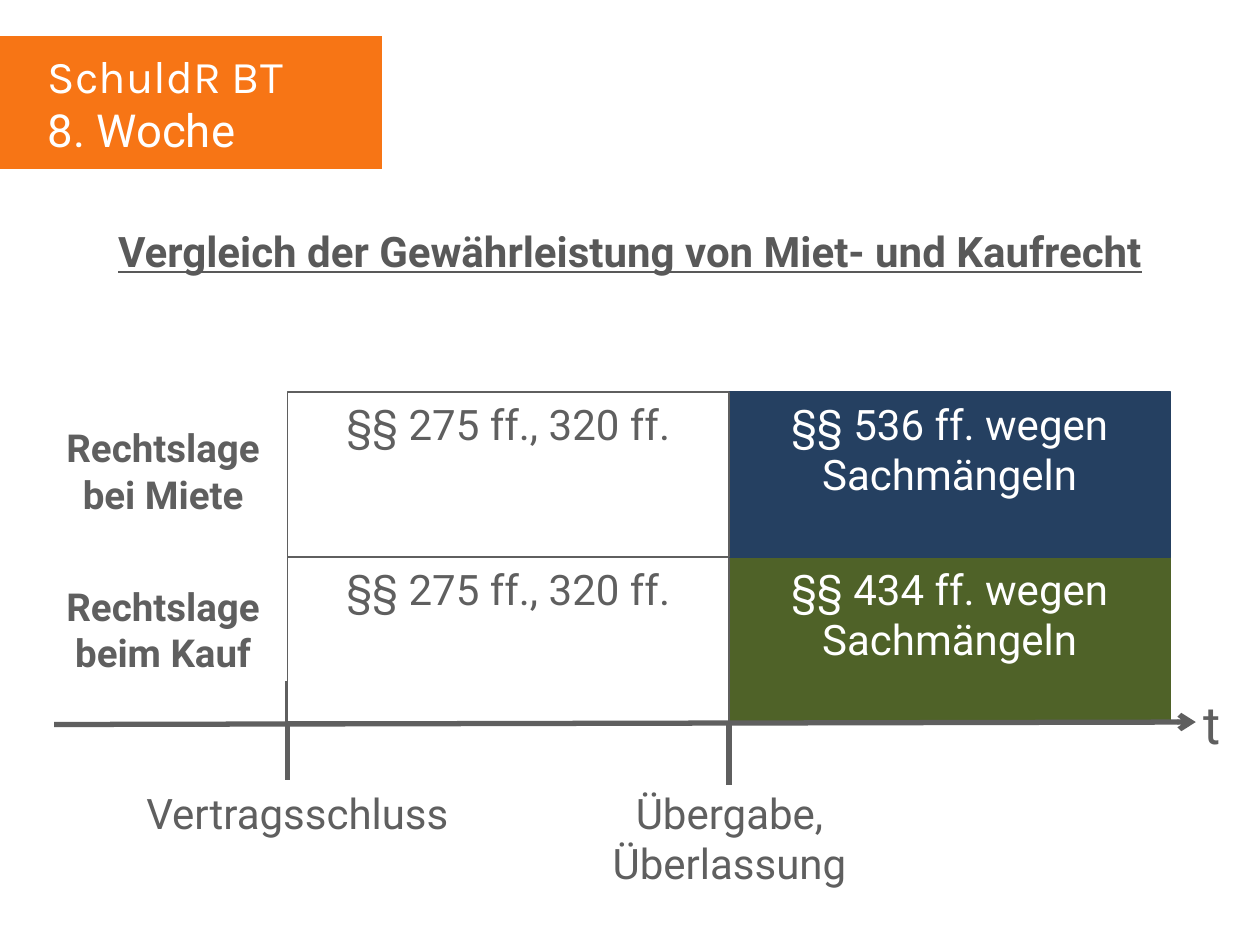
from lxml.etree import SubElement
from pptx import Presentation
from pptx.dml.color import RGBColor
from pptx.enum.shapes import MSO_CONNECTOR, MSO_SHAPE
from pptx.enum.text import MSO_ANCHOR, MSO_AUTO_SIZE, PP_ALIGN
from pptx.oxml.ns import qn
from pptx.util import Pt

ORANGE = RGBColor(0xF7, 0x75, 0x15)
WHITE = RGBColor(0xFF, 0xFF, 0xFF)
DARK_GRAY = RGBColor(0x59, 0x59, 0x59)
GRAY = RGBColor(0x5F, 0x5F, 0x5F)
BLUE = RGBColor(0x25, 0x40, 0x61)
GREEN = RGBColor(0x4F, 0x62, 0x28)

# Grid of the comparison, in points
GRID_LEFT, GRID_TOP = 164.4, 224
CELL_WIDTH, CELL_HEIGHT = 252.2, 94.3
HANDOVER = GRID_LEFT + CELL_WIDTH


def write(box, lines, fonts=("Roboto",), size=24, color=GRAY, bold=False,
          underline=False, align=PP_ALIGN.CENTER, space_after=0):
    """Write one paragraph per line, with one font for all or one for each."""
    frame = box.text_frame
    frame.word_wrap = True
    frame.auto_size = MSO_AUTO_SIZE.NONE
    frame.vertical_anchor = MSO_ANCHOR.TOP
    for index, line in enumerate(lines):
        para = frame.add_paragraph() if index else frame.paragraphs[0]
        para.alignment = align
        para.space_before = Pt(0)
        para.space_after = Pt(space_after)
        span = para.add_run()
        span.text = line
        span.font.name = fonts[index % len(fonts)]
        span.font.size = Pt(size)
        span.font.bold = bold
        span.font.underline = underline
        span.font.color.rgb = color


def add_text(page, left, top, width, height, *lines, **text_format):
    box = page.shapes.add_textbox(Pt(left), Pt(top), Pt(width), Pt(height))
    write(box, lines, **text_format)


def add_block(page, left, top, width, height, fill, outline=None):
    block = page.shapes.add_shape(
        MSO_SHAPE.RECTANGLE, Pt(left), Pt(top), Pt(width), Pt(height))
    block.shadow.inherit = False
    block.fill.solid()
    block.fill.fore_color.rgb = fill
    if outline is None:
        block.line.fill.background()
    else:
        block.line.color.rgb = outline
        block.line.width = Pt(0.75)
    return block


def add_line(page, x1, y1, x2, y2, arrow=False):
    line = page.shapes.add_connector(
        MSO_CONNECTOR.STRAIGHT, Pt(x1), Pt(y1), Pt(x2), Pt(y2))
    line.line.color.rgb = GRAY
    line.line.width = Pt(3)
    if arrow:
        SubElement(line.line._get_or_add_ln(), qn("a:tailEnd"), type="arrow")
    SubElement(line._element.spPr, qn("a:effectLst"))


def set_title(page, text):
    title = page.shapes.title
    title.left, title.top = Pt(8.6), Pt(125.3)
    title.width, title.height = Pt(702.8), Pt(36)
    write(title, [text], color=DARK_GRAY, bold=True, underline=True,
          space_after=5)


def add_row(page, top, label, label_top, rule, color):
    """One kind of contract: label, rules before and rules after handover."""
    after = add_block(page, HANDOVER, top, CELL_WIDTH, CELL_HEIGHT,
                      color, color)
    write(after, [rule], color=WHITE)
    before = add_block(page, GRID_LEFT, top, CELL_WIDTH, CELL_HEIGHT,
                       WHITE, GRAY)
    write(before, ["§§ 275 ff., 320 ff."])
    add_text(page, 28, label_top, 130.3, 60.5, label, size=22, bold=True)


def main():
    deck = Presentation()
    deck.slide_width, deck.slide_height = Pt(720), Pt(540)
    page = deck.slides.add_slide(deck.slide_layouts[5])

    # Course banner and title
    add_block(page, 0, 20.7, 218.2, 75.8, ORANGE)
    set_title(page, "Vergleich der Gewährleistung von Miet- und Kaufrecht")
    add_text(page, 20.2, 23.8, 187.2, 70.6, "SchuldR BT", "8. Woche",
             fonts=("Karla", "Roboto"), size=26, color=WHITE,
             align=PP_ALIGN.LEFT)

    # Moments on the time axis
    add_text(page, 680.4, 391.7, 31, 44, "t", size=30, align=PP_ALIGN.LEFT)
    for x, tick_top, label_left, label_height, label in (
            (GRID_LEFT, 389, 70.6, 36, "Vertragsschluss"),
            (HANDOVER, 391.7, 317.5, 65.5, "Übergabe, Überlassung")):
        add_line(page, x, tick_top, x, tick_top + 56.9)
        add_text(page, label_left, 446.4, 198.7, label_height, label)

    # Comparison rows
    add_row(page, GRID_TOP + CELL_HEIGHT, "Rechtslage beim Kauf", 329.8,
            "§§ 434 ff. wegen Sachmängeln", GREEN)
    add_row(page, GRID_TOP, "Rechtslage bei Miete", 239,
            "§§ 536 ff. wegen Sachmängeln", BLUE)

    # Time axis
    add_line(page, 31, 414, 683.3, 412.6, arrow=True)

    deck.save("out.pptx")


if __name__ == "__main__":
    main()
